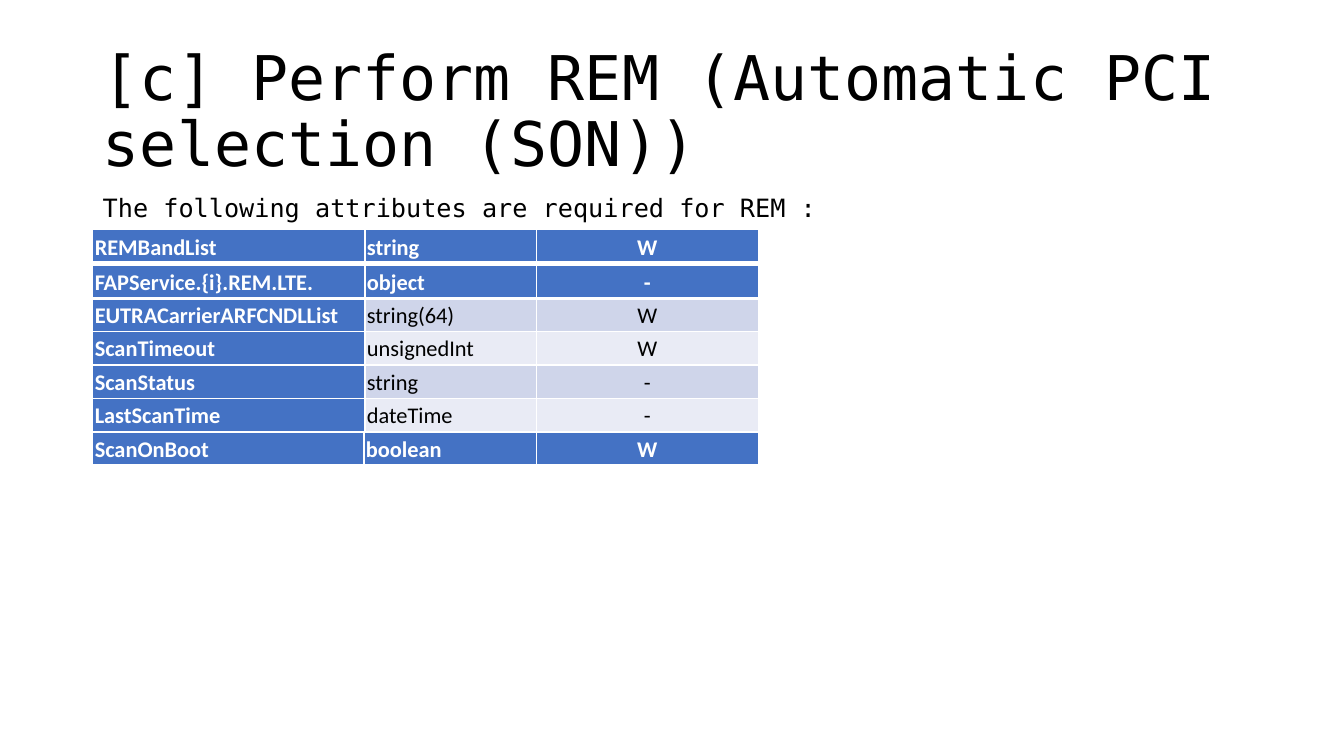
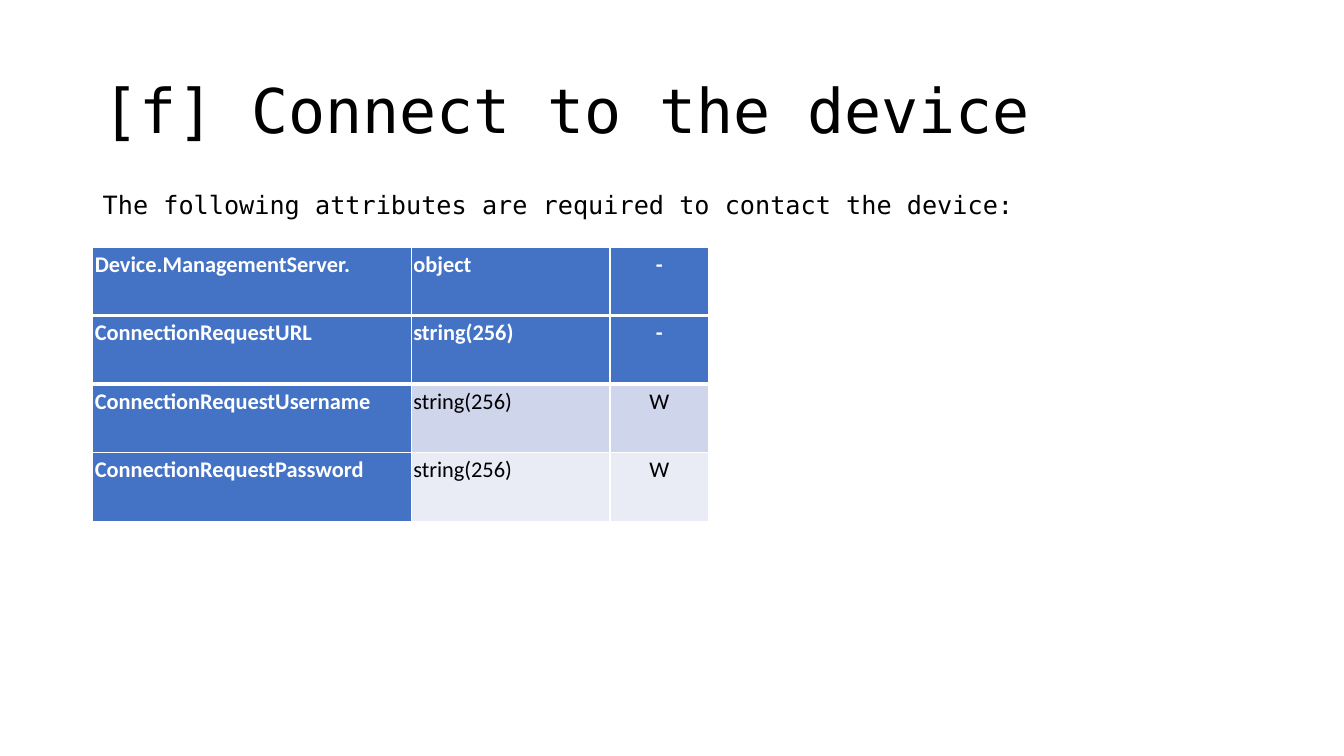
from dataclasses import dataclass

from pptx import Presentation
from pptx.dml.color import RGBColor
from pptx.enum.text import MSO_ANCHOR, MSO_AUTO_SIZE, PP_ALIGN
from pptx.oxml import parse_xml
from pptx.oxml.ns import nsdecls
from pptx.util import Inches, Pt


@dataclass(frozen=True)
class Theme:
    black: RGBColor = RGBColor(0x00, 0x00, 0x00)
    white: RGBColor = RGBColor(0xFF, 0xFF, 0xFF)
    header: RGBColor = RGBColor(0x44, 0x72, 0xC4)
    bands: tuple = (RGBColor(0xCF, 0xD5, 0xEA), RGBColor(0xE9, 0xEB, 0xF5))
    mono: str = "DejaVu Sans Mono"
    sans: str = "Calibri"
    title_size: int = 44
    intro_size: int = 18
    cell_size: int = 16
    thin_line: int = 1
    thick_line: int = 3


THEME = Theme()
LEFT = 0.92
CELL_MARGIN = Inches(0.02)
ALIGNMENTS = (PP_ALIGN.LEFT, PP_ALIGN.LEFT, PP_ALIGN.CENTER)


def style_paragraph(paragraph, font_name, size, color, bold=False,
                    alignment=PP_ALIGN.LEFT, spacing=1.0):
    paragraph.alignment = alignment
    paragraph.line_spacing = spacing
    font = paragraph.font
    font.name, font.size, font.bold = font_name, Pt(size), bold
    font.color.rgb = color


def add_titled_slide(deck, title):
    slide = deck.slides.add_slide(deck.slide_layouts[5])
    box = slide.shapes.title
    box.left, box.top = Inches(LEFT), Inches(0.4)
    box.width, box.height = Inches(11.5), Inches(1.45)
    frame = box.text_frame
    frame.text = title
    frame.word_wrap = True
    frame.auto_size = MSO_AUTO_SIZE.NONE
    frame.vertical_anchor = MSO_ANCHOR.MIDDLE
    style_paragraph(frame.paragraphs[0], THEME.mono, THEME.title_size,
                    THEME.black, spacing=0.9)
    return slide


def add_intro(slide, text, top, width):
    box = slide.shapes.add_textbox(
        Inches(LEFT), Inches(top), Inches(width), Inches(0.4))
    frame = box.text_frame
    frame.text = text
    frame.word_wrap = True
    frame.auto_size = MSO_AUTO_SIZE.SHAPE_TO_FIT_TEXT
    style_paragraph(frame.paragraphs[0], THEME.mono, THEME.intro_size, THEME.black)


def set_borders(cell, top, bottom):
    """Draw white cell borders; top and bottom are widths in points."""
    widths = {"lnL": THEME.thin_line, "lnR": THEME.thin_line,
              "lnT": top, "lnB": bottom}
    properties = cell._tc.get_or_add_tcPr()
    for tag, width in widths.items():
        properties.append(parse_xml(
            f'<a:{tag} {nsdecls("a")} w="{Pt(width)}"><a:solidFill>'
            f'<a:srgbClr val="{THEME.white}"/></a:solidFill></a:{tag}>'))


def format_cell(cell, text, row, column):
    """Header row and first column are solid; the other cells are banded."""
    solid = row == 0 or column == 0
    cell.text = text
    cell.margin_left = cell.margin_right = CELL_MARGIN
    cell.margin_top = cell.margin_bottom = CELL_MARGIN
    set_borders(cell,
                top=THEME.thick_line if row == 1 else THEME.thin_line,
                bottom=THEME.thick_line if row == 0 else THEME.thin_line)
    cell.fill.solid()
    cell.fill.fore_color.rgb = THEME.header if solid else THEME.bands[(row - 1) % 2]
    style_paragraph(cell.text_frame.paragraphs[0], THEME.sans, THEME.cell_size,
                    THEME.white if solid else THEME.black, bold=solid,
                    alignment=ALIGNMENTS[column], spacing=1.07)


def add_attribute_table(slide, top, column_widths, row_height, records):
    table = slide.shapes.add_table(
        len(records), len(column_widths), Inches(LEFT), Inches(top),
        Inches(sum(column_widths)), Inches(row_height * len(records))).table
    table.first_row = table.horz_banding = False
    for column, width in zip(table.columns, column_widths):
        column.width = Inches(width)
    for row, record in enumerate(records):
        table.rows[row].height = Inches(row_height)
        for column, text in enumerate(record):
            format_cell(table.cell(row, column), text, row, column)


def add_rem_slide(deck):
    slide = add_titled_slide(deck, "[c] Perform REM (Automatic PCI selection (SON))")
    widths, row_height = (2.7, 1.7, 2.2), 0.33
    add_attribute_table(slide, 2.63, widths, row_height, [
        ("FAPService.{i}.REM.LTE.", "object", "-"),
        ("EUTRACarrierARFCNDLList", "string(64)", "W"),
        ("ScanTimeout", "unsignedInt", "W"),
        ("ScanStatus", "string", "-"),
        ("LastScanTime", "dateTime", "-"),
    ])
    add_intro(slide, "The following attributes are required for REM :", 1.86, 10.13)
    add_attribute_table(slide, 2.28, widths, row_height,
                        [("REMBandList", "string", "W")])
    add_attribute_table(slide, 4.29, (2.69, 1.71, 2.2), row_height,
                        [("ScanOnBoot", "boolean", "W")])


def add_connection_slide(deck):
    slide = add_titled_slide(deck, "[f] Connect to the device")
    add_intro(slide, "The following attributes are required to contact the device:",
              1.83, 9.46)
    widths, row_height, top = (3.16, 1.97, 0.98), 0.68, 2.45
    add_attribute_table(slide, top + row_height, widths, row_height, [
        ("ConnectionRequestURL", "string(256)", "-"),
        ("ConnectionRequestUsername", "string(256)", "W"),
        ("ConnectionRequestPassword", "string(256)", "W"),
    ])
    add_attribute_table(slide, top, widths, row_height,
                        [("Device.ManagementServer.", "object", "-")])


def main():
    deck = Presentation()
    deck.slide_width, deck.slide_height = Inches(13.33), Inches(7.5)
    add_rem_slide(deck)
    add_connection_slide(deck)
    deck.save("out.pptx")


if __name__ == "__main__":
    main()
